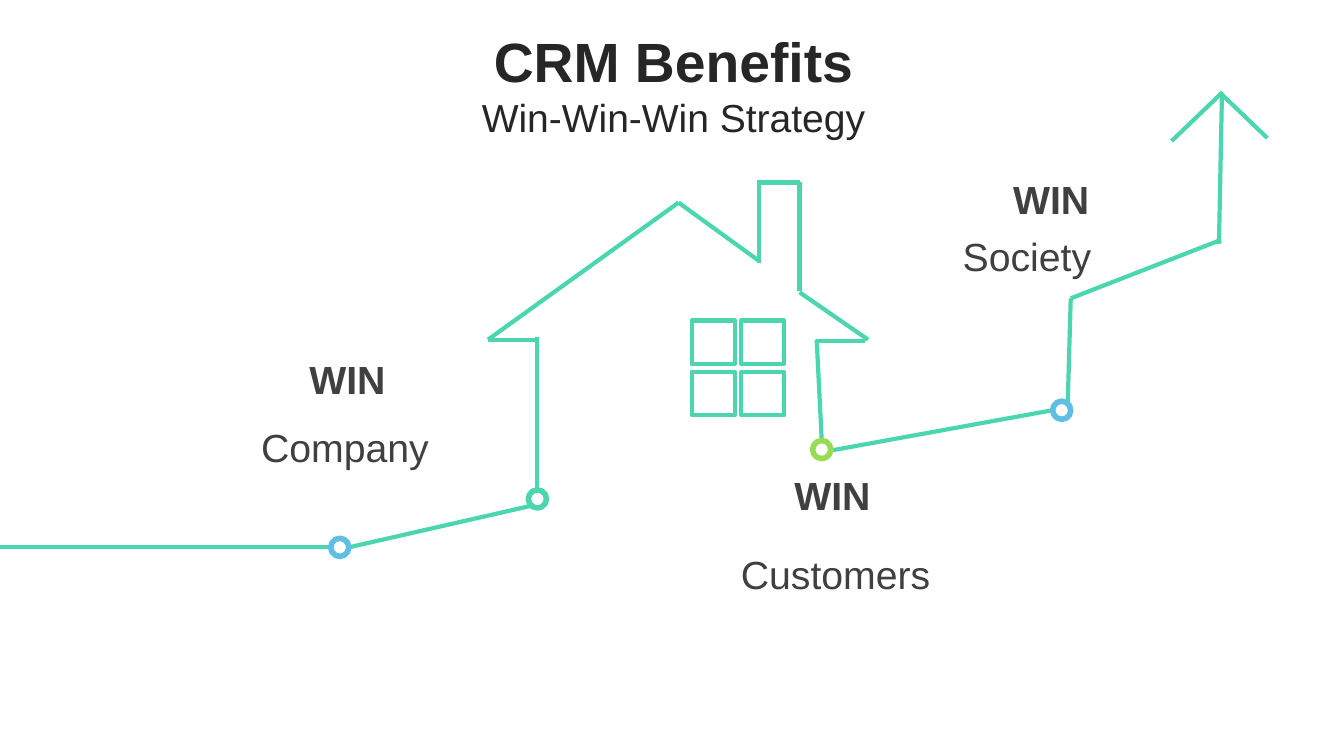
from pptx import Presentation
from pptx.dml.color import RGBColor
from pptx.enum.shapes import MSO_CONNECTOR, MSO_SHAPE
from pptx.enum.text import MSO_ANCHOR, PP_ALIGN
from pptx.oxml.ns import qn
from pptx.util import Inches, Pt
from lxml import etree

TEAL = RGBColor(0x4C, 0xD6, 0xB0)
BLUE = RGBColor(0x5E, 0xBE, 0xE4)
GREEN = RGBColor(0x98, 0xDC, 0x56)
WHITE = RGBColor(0xFF, 0xFF, 0xFF)
TITLE_COLOR = RGBColor(0x26, 0x26, 0x26)
LABEL_COLOR = RGBColor(0x40, 0x40, 0x40)

STRAIGHT = MSO_CONNECTOR.STRAIGHT
ELLIPSE, RECTANGLE = MSO_SHAPE.OVAL, MSO_SHAPE.RECTANGLE
LEFT, CENTER, RIGHT = PP_ALIGN.LEFT, PP_ALIGN.CENTER, PP_ALIGN.RIGHT
TOP, MIDDLE = MSO_ANCHOR.TOP, MSO_ANCHOR.MIDDLE

# Line segments as x1, y1, x2, y2
PATH_LINES = [
    (0, 5.43, 3.28, 5.43),
    (3.46, 5.43, 5.26, 5.02),
    (8.13, 4.49, 10.44, 4.07),
    (10.62, 2.96, 12.11, 2.38),
    (10.59, 4.01, 10.62, 2.96),
]
ARROW_LINES = [
    (12.12, 0.92, 12.09, 2.42),
    (11.62, 1.4, 12.12, 0.92),
    (12.57, 1.37, 12.1, 0.92),
]
HOUSE_LINES = [
    (4.84, 3.37, 5.33, 3.37),
    (5.33, 3.34, 5.33, 4.86),
    (8.09, 3.38, 8.58, 3.38),
    (8.1, 3.37, 8.15, 4.37),
    (7.53, 1.81, 7.53, 2.61),
    (4.84, 3.37, 6.73, 2.01),
    (8.61, 3.37, 7.93, 2.9),
    (7.53, 2.59, 6.73, 2.01),
    (7.93, 1.81, 7.93, 2.89),
    (7.51, 1.81, 7.93, 1.81),
]
# Markers as left, top, ring colour
MARKERS = [
    (3.28, 5.34, BLUE),
    (5.24, 4.86, TEAL),
    (10.44, 3.98, BLUE),
    (8.06, 4.37, GREEN),
]
# Labels as text, left, top, width, bold, alignment
LABELS = [
    ("WIN", 2.97, 3.48, 1.89, True, LEFT),
    ("Company", 2.46, 4.15, 1.89, False, RIGHT),
    ("WIN", 7.78, 4.63, 1.89, True, LEFT),
    ("Customers", 7.25, 5.41, 2.17, False, LEFT),
    ("WIN", 9.95, 1.69, 1.89, True, LEFT),
    ("Society", 9.45, 2.26, 1.89, False, LEFT),
]
MARKER_SIZE = 0.18
PANE_SIZE = 0.43


def add_text(slide, lines, left, top, width, height, *, color=LABEL_COLOR,
             align=LEFT, anchor=TOP, line_spacing=None, space_before=0):
    """Add a text box; each line is a (text, size, bold) tuple."""
    box = slide.shapes.add_textbox(
        Inches(left), Inches(top), Inches(width), Inches(height))
    frame = box.text_frame
    frame.word_wrap = True
    frame.vertical_anchor = anchor
    for index, (text, size, bold) in enumerate(lines):
        paragraph = frame.add_paragraph() if index else frame.paragraphs[0]
        paragraph.alignment = align
        paragraph.line_spacing = line_spacing
        paragraph.space_before = Pt(space_before)
        run = paragraph.add_run()
        run.text = text
        run.font.name = "Arial"
        run.font.size = Pt(size)
        run.font.bold = bold
        run.font.color.rgb = color


def add_lines(slide, segments):
    for segment in segments:
        connector = slide.shapes.add_connector(
            STRAIGHT, *[Inches(value) for value in segment])
        connector.line.color.rgb = TEAL
        connector.line.width = Pt(3)
        properties = connector._element.spPr
        etree.SubElement(properties, qn("a:effectLst"))


def add_outline(slide, kind, left, top, size, color, weight, fill=None):
    shape = slide.shapes.add_shape(
        kind, Inches(left), Inches(top), Inches(size), Inches(size))
    shape.shadow.inherit = False
    if fill is None:
        shape.fill.background()
    else:
        shape.fill.solid()
        shape.fill.fore_color.rgb = fill
    shape.line.color.rgb = color
    shape.line.width = Pt(weight)


def main():
    presentation = Presentation()
    presentation.slide_width = Inches(13.33)
    presentation.slide_height = Inches(7.5)
    slide = presentation.slides.add_slide(presentation.slide_layouts[6])

    # Title and subtitle
    add_text(slide, [("CRM Benefits", 39.5, True),
                     ("Win-Win-Win Strategy", 27.9, False)],
             0.35, 0.37, 12.66, 1.09, color=TITLE_COLOR, align=CENTER,
             anchor=MIDDLE, line_spacing=0.7, space_before=10)

    # Rising path, arrow and house
    add_lines(slide, PATH_LINES + ARROW_LINES + HOUSE_LINES)

    # Window panes
    for row in range(2):
        for column in range(2):
            add_outline(slide, RECTANGLE, 6.86 + column * 0.49,
                        3.18 + row * 0.51, PANE_SIZE, TEAL, 3)

    # Markers on the path
    for left, top, color in MARKERS:
        add_outline(slide, ELLIPSE, left, top, MARKER_SIZE, color, 4, WHITE)

    # Labels for the three winners
    for text, left, top, width, bold, align in LABELS:
        add_text(slide, [(text, 28, bold)], left, top, width, 0.57, align=align)

    presentation.save("out.pptx")


if __name__ == "__main__":
    main()
